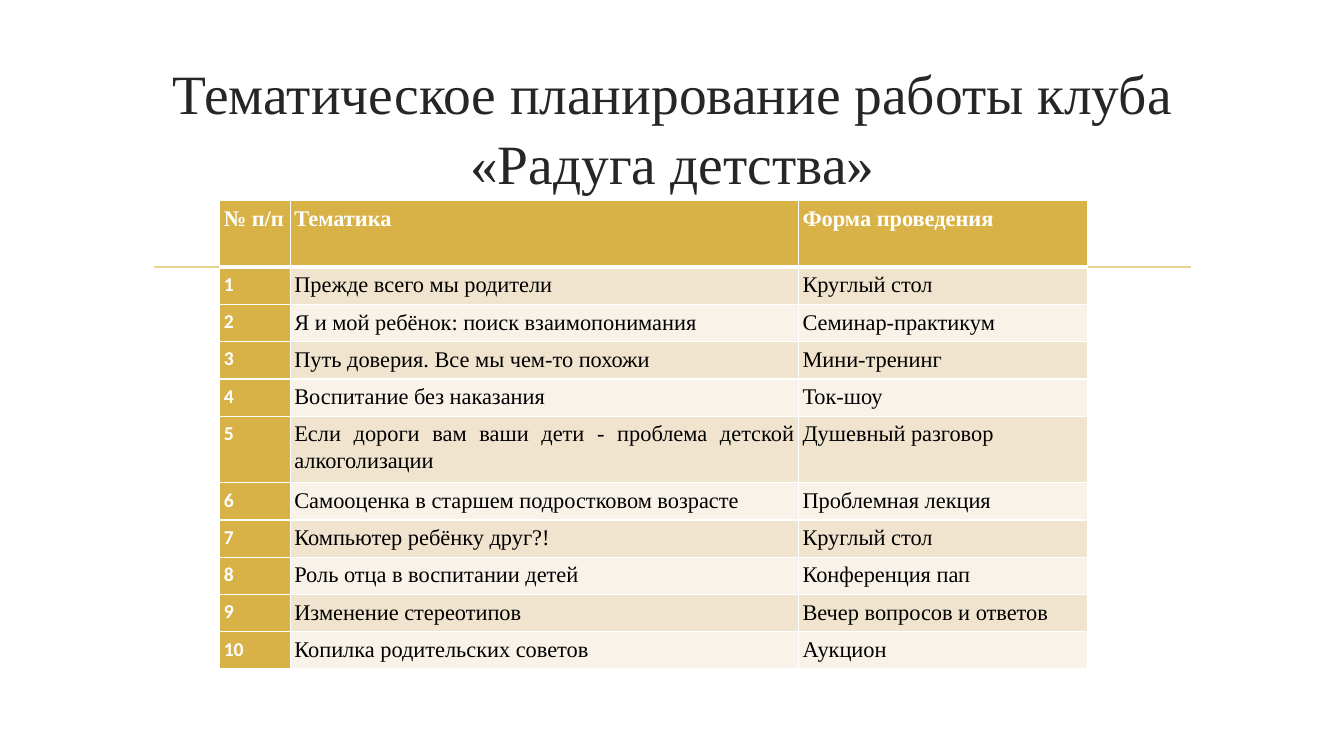
"""Builds the slide with the thematic plan of a parents' club."""
from lxml import etree
from pptx import Presentation
from pptx.dml.color import RGBColor
from pptx.enum.shapes import MSO_CONNECTOR
from pptx.enum.text import MSO_ANCHOR, PP_ALIGN
from pptx.oxml.ns import qn
from pptx.util import Inches, Pt

STRAIGHT = MSO_CONNECTOR.STRAIGHT
MIDDLE = MSO_ANCHOR.MIDDLE
CENTER = PP_ALIGN.CENTER
JUSTIFY = PP_ALIGN.JUSTIFY

SERIF, SANS = "Times New Roman", "Calibri"
GOLD, PALE_GOLD, WHITE, BLACK, DARK = "D9B247", "E8D191", "FFFFFF", "000000", "262626"
BANDS = ["F1E4CF", "F8F2E9"]

TITLE = "Тематическое планирование работы клуба «Радуга детства»"
HEADER = ("№ п/п", "Тематика", "Форма проведения")
MEETINGS = [
    ("Прежде всего мы родители", "Круглый стол"),
    ("Я и мой ребёнок: поиск взаимопонимания", "Семинар-практикум"),
    ("Путь доверия. Все мы чем-то похожи", "Мини-тренинг"),
    ("Воспитание без наказания", "Ток-шоу"),
    ("Если дороги вам ваши дети - проблема детской алкоголизации", "Душевный разговор"),
    ("Самооценка в старшем подростковом возрасте", "Проблемная лекция"),
    ("Компьютер ребёнку друг?!", "Круглый стол"),
    ("Роль отца в воспитании детей", "Конференция пап"),
    ("Изменение стереотипов", "Вечер вопросов и ответов"),
    ("Копилка родительских советов", "Аукцион"),
]
COLUMN_WIDTHS = [0.7, 5.04, 2.87]
ROW_HEIGHT, TALL_HEIGHT = 0.37, 0.66
TALL_ROWS = (0, 5)
CELL_INSET = 0.04


def color(value):
    return RGBColor.from_string(value)


def style(paragraph, face, size, ink, align, bold=False):
    paragraph.alignment = align
    font = paragraph.font
    font.name, font.size, font.bold = face, Pt(size), bold
    font.color.rgb = color(ink)


def add_border(cell, side, width):
    properties = cell._tc.get_or_add_tcPr()
    line = etree.Element(qn(f"a:ln{side}"), w=str(Pt(width)))
    fill = etree.SubElement(line, qn("a:solidFill"))
    etree.SubElement(fill, qn("a:srgbClr"), val=WHITE)
    properties.append(line)


def fill_cell(cell, text, row, column):
    for side in "LRTB":
        thick = (row, side) in ((0, "B"), (1, "T"))
        add_border(cell, side, 3 if thick else 1)
    heading = row == 0 or column == 0
    cell.fill.solid()
    cell.fill.fore_color.rgb = color(GOLD if heading else BANDS[(row - 1) % 2])
    cell.margin_left = cell.margin_right = Inches(CELL_INSET)
    cell.margin_top = cell.margin_bottom = Inches(CELL_INSET)
    cell.text = text
    paragraph = cell.text_frame.paragraphs[0]
    paragraph.line_spacing = 1.07
    face, size = (SANS, 14) if row and column == 0 else (SERIF, 16)
    style(paragraph, face, size, WHITE if heading else BLACK, JUSTIFY, heading)


def add_rule(page):
    rule = page.shapes.add_connector(
        STRAIGHT, Inches(1.53), Inches(2.65), Inches(11.81), Inches(2.65))
    rule.line.color.rgb = color(PALE_GOLD)
    rule.line.width = Pt(1.25)
    etree.SubElement(rule._element.spPr, qn("a:effectLst"))


def add_title(page):
    box = page.shapes.add_textbox(Inches(1.42), Inches(0.71), Inches(10.5), Inches(1))
    frame = box.text_frame
    frame.word_wrap = True
    frame.vertical_anchor = MIDDLE
    frame.margin_top, frame.margin_bottom = Inches(0.1), Inches(0.02)
    frame.text = TITLE
    paragraph = frame.paragraphs[0]
    paragraph.line_spacing = 1.05
    style(paragraph, SERIF, 39.6, DARK, CENTER)


def add_plan(page):
    rows = [HEADER] + [(str(number), *meeting) for number, meeting in enumerate(MEETINGS, 1)]
    heights = [TALL_HEIGHT if row in TALL_ROWS else ROW_HEIGHT for row in range(len(rows))]
    table = page.shapes.add_table(
        len(rows), len(HEADER), Inches(2.18), Inches(1.99),
        Inches(sum(COLUMN_WIDTHS)), Inches(sum(heights))).table
    for column, width in zip(table.columns, COLUMN_WIDTHS):
        column.width = Inches(width)
    for row, texts in enumerate(rows):
        table.rows[row].height = Inches(heights[row])
        for column, text in enumerate(texts):
            fill_cell(table.cell(row, column), text, row, column)


def main():
    deck = Presentation()
    deck.slide_width, deck.slide_height = Inches(13.33), Inches(7.5)
    page = deck.slides.add_slide(deck.slide_layouts[6])
    add_rule(page)
    add_title(page)
    add_plan(page)
    deck.save("out.pptx")


if __name__ == "__main__":
    main()
